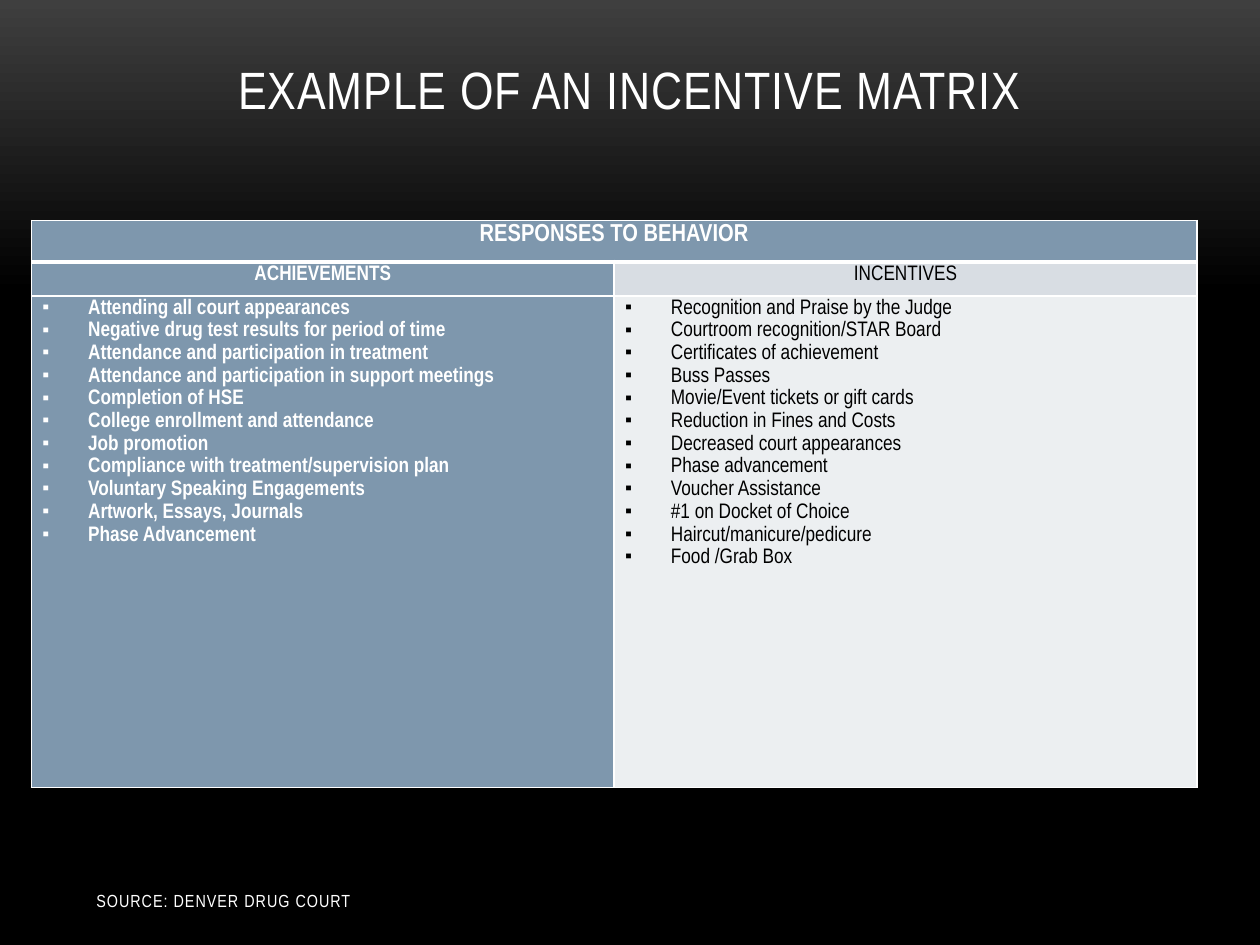
from dataclasses import dataclass

import pptx
import pptx.dml.color
import pptx.enum.text
import pptx.oxml
import pptx.oxml.ns
import pptx.util
from lxml import etree

Inches, Pt = pptx.util.Inches, pptx.util.Pt
ALIGN, ANCHOR = pptx.enum.text.PP_ALIGN, pptx.enum.text.MSO_ANCHOR


@dataclass(frozen=True)
class Theme:
    font: str = "Arial Narrow"
    glow: str = "3F3F3F"
    black: str = "000000"
    white: str = "FFFFFF"
    blue: str = "7E97AD"
    mist: str = "D8DDE3"
    pale: str = "ECEFF1"
    title: int = 30
    banner: int = 14
    body: int = 12
    source: int = 10


@dataclass(frozen=True)
class Column:
    heading: str
    items: list[str]
    justified: int  # number of leading items set justified
    head_fill: str
    body_fill: str
    color: str
    bold: bool


T = Theme()
WIDTH, HEIGHT = 10, 7.5
TABLE = (0.25, 1.75, 9.25, 4.5)
ROW_HEIGHTS = (0.33, 0.27, 3.9)
INDENT, TAB = Inches(0.38), Inches(0.25)

COLUMNS = [
    Column("ACHIEVEMENTS", [
        "Attending all court appearances",
        "Negative drug test results for period of time",
        "Attendance and participation in treatment",
        "Attendance and participation in support meetings",
        "Completion of HSE",
        "College enrollment and attendance",
        "Job promotion",
        "Compliance with treatment/supervision plan",
        "Voluntary Speaking Engagements",
        "Artwork, Essays, Journals",
        "Phase Advancement",
    ], 2, T.blue, T.blue, T.white, True),
    Column("INCENTIVES", [
        "Recognition and Praise by the Judge",
        "Courtroom recognition/STAR Board",
        "Certificates of achievement",
        "Buss Passes",
        "Movie/Event tickets or gift cards",
        "Reduction in Fines and Costs",
        "Decreased court appearances",
        "Phase advancement",
        "Voucher Assistance",
        "#1 on Docket of Choice",
        "Haircut/manicure/pedicure",
        "Food /Grab Box",
    ], 12, T.mist, T.pale, T.black, False),
]


def rgb(color: str) -> pptx.dml.color.RGBColor:
    return pptx.dml.color.RGBColor.from_string(color)


def add_text(p, text: str, *, size: float, color: str = T.white, bold: bool = False,
             align=ALIGN.LEFT, line: float = 1.0, after: float = 0,
             tracking: float = 0, bullet: bool = False) -> None:
    """Fill one paragraph with formatted text."""
    if bullet:
        pPr = p._p.get_or_add_pPr()
        pPr.set("marL", str(INDENT))
        pPr.set("indent", str(-INDENT))
        etree.SubElement(pPr, pptx.oxml.ns.qn("a:buSzPct"), val="70000")
        etree.SubElement(pPr, pptx.oxml.ns.qn("a:buChar"), char="▪")
        tabs = etree.SubElement(pPr, pptx.oxml.ns.qn("a:tabLst"))
        etree.SubElement(tabs, pptx.oxml.ns.qn("a:tab"), pos=str(TAB), algn="l")
    p.alignment, p.line_spacing = align, line
    p.space_before, p.space_after = Pt(0), Pt(after)
    r = p.add_run()
    r.text = text
    r.font.name, r.font.size, r.font.bold = T.font, Pt(size), bold
    r.font.color.rgb = rgb(color)
    if tracking:
        r._r.get_or_add_rPr().set("spc", str(round(tracking * 100)))


def add_box(s, text: str, box: tuple[float, ...], anchor, **fmt) -> None:
    """Add a one-line text box."""
    tf = s.shapes.add_textbox(*map(Inches, box)).text_frame
    tf.word_wrap, tf.vertical_anchor = True, anchor
    add_text(tf.paragraphs[0], text, **fmt)


def style_cell(cell, fill: str, top: float = 1, bottom: float = 1) -> None:
    """Set margins, fill and white borders of a cell."""
    cell.margin_left = cell.margin_right = Inches(0.07)
    cell.margin_top = cell.margin_bottom = 0
    cell.fill.solid()
    cell.fill.fore_color.rgb = rgb(fill)
    tcPr = cell._tc.get_or_add_tcPr()
    for i, (side, width) in enumerate((("L", 1), ("R", 1), ("T", top), ("B", bottom))):
        tcPr.insert(i, pptx.oxml.parse_xml(
            f'<a:ln{side} {pptx.oxml.ns.nsdecls("a")} w="{Pt(width)}"><a:solidFill>'
            f'<a:srgbClr val="{T.white}"/></a:solidFill></a:ln{side}>'))


def add_matrix(s) -> None:
    """Add the table: a merged banner, then a heading and a list per column."""
    table = s.shapes.add_table(len(ROW_HEIGHTS), len(COLUMNS), *map(Inches, TABLE)).table
    table.first_row = table.horz_banding = False
    for row, height in zip(table.rows, ROW_HEIGHTS):
        row.height = Inches(height)
    heading = dict(align=ALIGN.CENTER, line=1.15, after=3)

    table.cell(0, 0).merge(table.cell(0, len(COLUMNS) - 1))
    add_text(table.cell(0, 0).text_frame.paragraphs[0], "RESPONSES TO BEHAVIOR",
             size=T.banner, bold=True, **heading)

    for c, col in enumerate(COLUMNS):
        table.columns[c].width = Inches(TABLE[2] / len(COLUMNS))
        banner, head, body = (table.cell(r, c) for r in range(len(ROW_HEIGHTS)))
        style_cell(banner, T.blue, bottom=3)
        style_cell(head, col.head_fill, top=3)
        style_cell(body, col.body_fill)
        look = dict(size=T.body, color=col.color, bold=col.bold)
        add_text(head.text_frame.paragraphs[0], col.heading, **look, **heading)
        tf = body.text_frame
        for i, item in enumerate(col.items):
            p = tf.add_paragraph() if i else tf.paragraphs[0]
            align = ALIGN.JUSTIFY if i < col.justified else ALIGN.LEFT
            add_text(p, item, align=align, line=1.15, bullet=True, **look)


def main() -> None:
    prs = pptx.Presentation()
    prs.slide_width, prs.slide_height = Inches(WIDTH), Inches(HEIGHT)
    s = prs.slides.add_slide(prs.slide_layouts[6])

    # Background fading to black below the title
    fill = s.background.fill
    fill.gradient()
    fill.gradient_angle = 270
    for stop, color, position in zip(fill.gradient_stops, (T.glow, T.black), (0, 0.31)):
        stop.color.rgb, stop.position = rgb(color), position

    # Title, matrix and source line
    margin = WIDTH / 15
    add_box(s, "EXAMPLE OF AN INCENTIVE MATRIX", (margin, 0.3, WIDTH - 2 * margin, 0.7),
            ANCHOR.BOTTOM, size=T.title, align=ALIGN.CENTER, tracking=0.5)
    add_matrix(s)
    add_box(s, "SOURCE: DENVER DRUG COURT", (margin, 6.95, 3.17, 0.4),
            ANCHOR.MIDDLE, size=T.source, tracking=0.6)
    prs.save("out.pptx")


if __name__ == "__main__":
    main()
